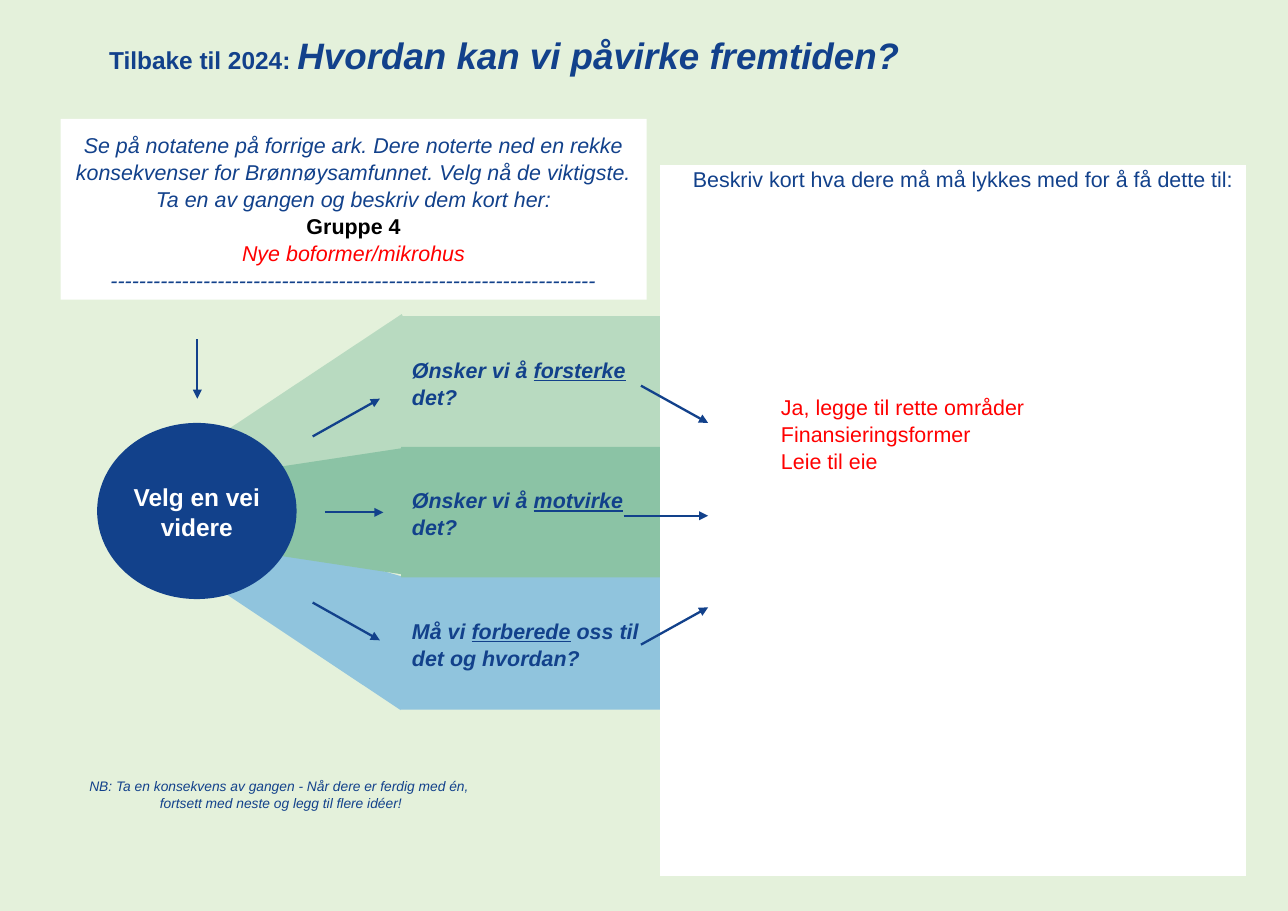
import pptx
import pptx.util
import pptx.dml.color
import pptx.enum.shapes
import pptx.enum.text
import pptx.oxml.ns
import lxml.etree

Cm = pptx.util.Cm
Color = pptx.dml.color.RGBColor
Kind = pptx.enum.shapes.MSO_SHAPE
Align = pptx.enum.text.PP_ALIGN
Anchor = pptx.enum.text.MSO_ANCHOR

PALE = Color(0xE4, 0xF1, 0xDB)
MINT = Color(0xB8, 0xDA, 0xC0)
GREEN = Color(0x8B, 0xC3, 0xA5)
SKY = Color(0x90, 0xC4, 0xDD)
NAVY = Color(0x12, 0x41, 0x8B)
RED = Color(0xFF, 0x00, 0x00)
BLACK = Color(0x00, 0x00, 0x00)
WHITE = Color(0xFF, 0xFF, 0xFF)


class Board:
    font = "Arial"
    lead = 1.05

    def __init__(self, deck):
        self.slide = deck.slides.add_slide(deck.slide_layouts[6])
        fill = self.slide.background.fill
        fill.solid()
        fill.fore_color.rgb = PALE

    def shape(self, kind, box, color, turn=0):
        item = self.slide.shapes.add_shape(kind, *map(Cm, box))
        item.shadow.inherit = False
        item.fill.solid()
        item.fill.fore_color.rgb = color
        item.line.fill.background()
        item.rotation = turn
        return item

    def wedge(self, box, color, turn):
        self.shape(Kind.TRAPEZOID, box, color, turn).adjustments[0] = 0.244

    def label(self, box, lines, **look):
        self.text(self.slide.shapes.add_textbox(*map(Cm, box)), lines, **look)

    def text(self, item, lines, pad=0.28, align=Align.CENTER,
             anchor=Anchor.TOP, **frame):
        """Fill item with lines; each line is a list of (words, format) runs."""
        body = item.text_frame
        look = {"word_wrap": True, "vertical_anchor": anchor}
        for side in ("left", "top", "right", "bottom"):
            look["margin_" + side] = Cm(pad)
        for name, value in (look | frame).items():
            setattr(body, name, value)
        for i, runs in enumerate(lines):
            para = body.paragraphs[0] if i == 0 else body.add_paragraph()
            para.alignment = align
            para.line_spacing = self.lead
            for words, style in runs:
                run = para.add_run()
                run.text = words
                self.style(run.font, style)

    def style(self, font, style):
        look = {"name": self.font, "size": 14, "color": NAVY} | style
        font.color.rgb = look.pop("color")
        look["size"] = pptx.util.Pt(look["size"])
        for name, value in look.items():
            setattr(font, name, value)

    def arrow(self, *ends):
        line = self.slide.shapes.add_connector(
            pptx.enum.shapes.MSO_CONNECTOR.STRAIGHT, *map(Cm, ends))
        line.line.color.rgb = NAVY
        line.line.width = pptx.util.Pt(1.5)
        qn = pptx.oxml.ns.qn
        props = line._element.spPr
        tip = lxml.etree.SubElement(props.find(qn("a:ln")), qn("a:tailEnd"))
        tip.set("type", "triangle")
        lxml.etree.SubElement(props, qn("a:effectLst"))


def main():
    deck = pptx.Presentation()
    deck.slide_width, deck.slide_height = Cm(29.7), Cm(21)
    board = Board(deck)
    slant = {"italic": True}
    strong = {"bold": True, "italic": True}

    panel = board.shape(Kind.RECTANGLE, (15.22, 3.81, 13.51, 16.38), WHITE)
    ideas = ["Ja, legge til rette områder", "Finansieringsformer", "Leie til eie"]
    board.text(panel, [[(idea, {"color": RED})] for idea in ideas],
               align=Align.LEFT, margin_left=Cm(2.79), margin_top=Cm(5.25))

    board.wedge((6.2, 11.61, 3, 4.78), SKY, 294.9)
    board.wedge((6.2, 7.21, 3.02, 4.83), MINT, 245.1)
    board.wedge((5.66, 9.37, 3, 4.83), GREEN, 270)
    hub = board.shape(Kind.OVAL, (2.24, 9.75, 4.6, 4.06), NAVY)
    board.text(hub, [[("Velg en vei videre",
                       {"size": 16, "color": WHITE, "bold": True})]],
               pad=0, anchor=Anchor.MIDDLE)

    paths = [
        (MINT, "Ønsker vi å ", "forsterke", " det?"),
        (GREEN, "Ønsker vi å ", "motvirke", " det?"),
        (SKY, "Må vi ", "forberede", " oss til det og hvordan?"),
    ]
    for i, (color, start, verb, rest) in enumerate(paths):
        band = board.shape(Kind.RECTANGLE, (9.25, 7.29 + 3.01 * i, 5.97, 3.05), color)
        runs = [(start, strong), (verb, strong | {"underline": True}), (rest, strong)]
        board.text(band, [runs], pad=0.25, align=Align.LEFT, anchor=Anchor.MIDDLE)

    board.label((15.37, 3.56, 13.82, 1.12), [
        [("Beskriv kort hva dere må må lykkes med for å få dette til: ", {})],
    ], pad=0.25)
    board.label((1.7, 17.63, 9.55, 1.35), [
        [(words, slant | {"size": 9})] for words in (
            "NB: Ta en konsekvens av gangen - Når dere er ferdig med én, ",
            "fortsett med neste og legg til flere idéer!")
    ])
    board.label((2.24, 0.43, 21.74, 1.6), [
        [("Tilbake til 2024: ", {"size": 16, "bold": True}),
         ("Hvordan kan vi påvirke fremtiden?", strong | {"size": 24})],
    ], align=Align.LEFT)

    task = board.shape(Kind.RECTANGLE, (1.4, 2.74, 13.51, 4.17), WHITE)
    board.text(task, [
        [("Se på notatene på forrige ark. Dere noterte ned en rekke "
          "konsekvenser for Brønnøysamfunnet. Velg nå de viktigste. "
          "Ta en av gangen og beskriv dem kort her:", slant)],
        [("Gruppe 4", {"color": BLACK, "bold": True})],
        [("Nye boformer/mikrohus", slant | {"color": RED})],
        [("-" * 68, slant)],
    ])

    for ends in [
        (4.55, 7.82, 4.55, 9.19),
        (7.21, 10.06, 8.76, 9.19),
        (7.49, 11.81, 8.84, 11.81),
        (7.21, 13.89, 8.76, 14.76),
        (14.78, 8.89, 16.33, 9.75),
        (14.38, 11.89, 16.33, 11.89),
        (14.78, 14.86, 16.33, 14),
    ]:
        board.arrow(*ends)
    deck.save("out.pptx")


if __name__ == "__main__":
    main()
